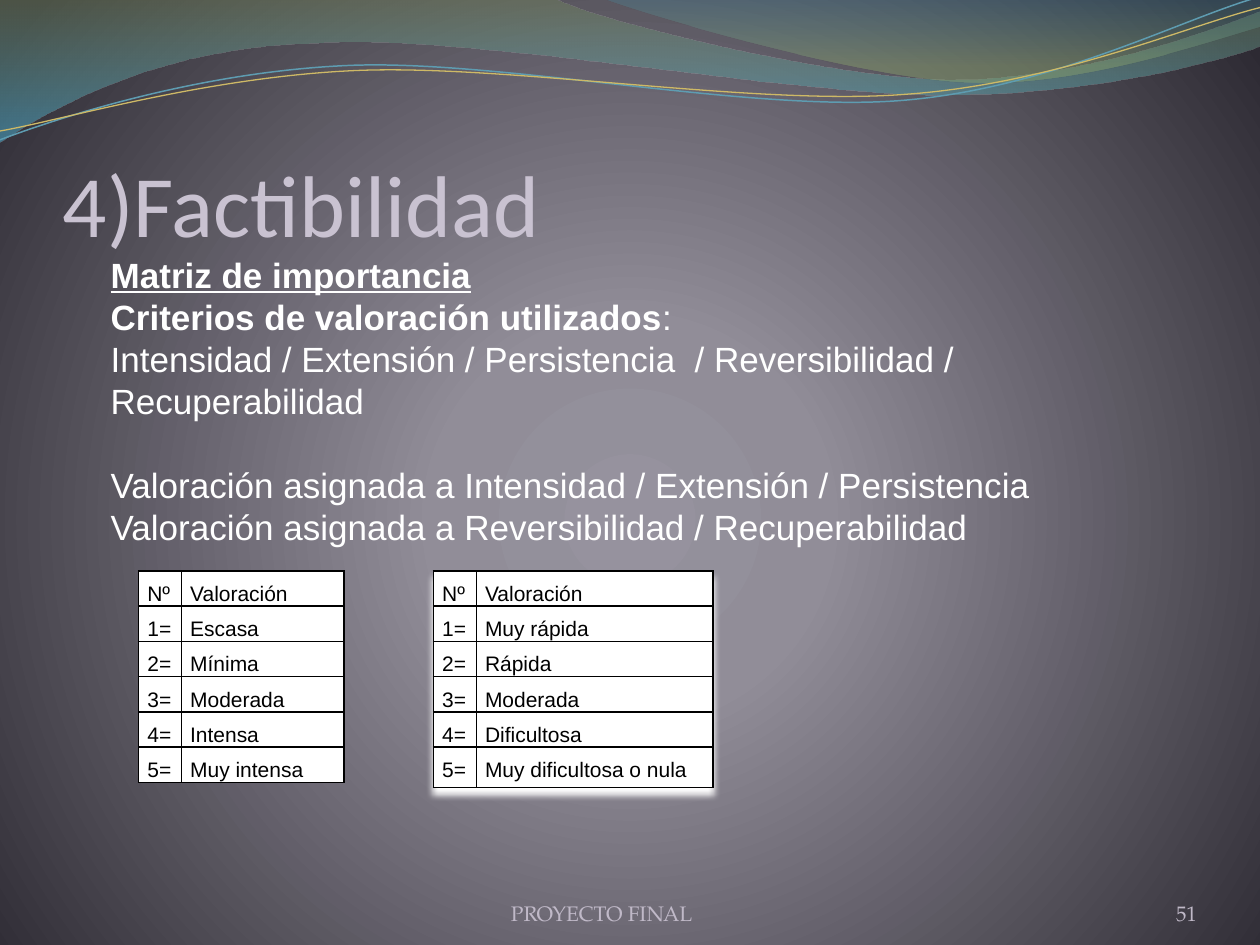
from pptx import Presentation
from pptx.dml.color import RGBColor
from pptx.enum.text import MSO_ANCHOR, PP_ALIGN
from pptx.oxml import parse_xml
from pptx.oxml.ns import nsdecls, qn
from pptx.util import Inches, Pt

WHITE = RGBColor(0xFF, 0xFF, 0xFF)
BLACK = RGBColor(0, 0, 0)
LILAC = RGBColor(0xC9, 0xC2, 0xD1)
MUTED = RGBColor(0xC0, 0xB9, 0xC8)
GLOW = RGBColor(0x96, 0x92, 0x9E)
GREY = RGBColor(0x91, 0x8D, 0x98)
NIGHT = RGBColor(0x2D, 0x2A, 0x33)
OLIVE = RGBColor(0x74, 0x85, 0x5E)
AQUA = RGBColor(0x4A, 0xAC, 0xCE)
TEAL = RGBColor(0x45, 0x88, 0x9F)
MOSS = RGBColor(0x8A, 0xA3, 0x6D)
BLUE = RGBColor(0x5E, 0x9C, 0xB1)
GOLD = RGBColor(0xCE, 0xB9, 0x66)
BOTTOM = MSO_ANCHOR.BOTTOM
LEFT, CENTER, RIGHT = PP_ALIGN.LEFT, PP_ALIGN.CENTER, PP_ALIGN.RIGHT
DOWNWARD = '<a:lin ang="5400000" scaled="0"/>'
RADIAL = ('<a:path path="circle"><a:fillToRect l="10000" t="110000" '
          'r="10000" b="100000"/></a:path>')

WIDE_WAVE = [(0, 0), (4.4, -0.01), (4.76, 0.17, 6.64, 0.63, 7.58, 0.63),
             (8.53, 0.63, 9.58, 0.26, 10, 0.09), (10.01, 0.36),
             (9.83, 0.44, 8.7, 0.76, 7.46, 0.75),
             (6.22, 0.75, 3.82, 0.28, 2.57, 0.34),
             (1.29, 0.36, 0.46, 0.83, -0.01, 1.13)]
RIGHT_WAVE = [(4.79, -0.01), (5.09, 0.11, 6.82, 0.62, 7.69, 0.65),
              (8.56, 0.69, 9.61, 0.32, 10, 0.21), (10, 0)]
BLUE_STRAND = [(0, 1.11), (0.48, 0.93, 1.58, 0.57, 2.77, 0.52),
               (3.95, 0.47, 5.93, 0.89, 7.13, 0.8),
               (8.33, 0.71, 9.38, 0.15, 9.98, -0.02)]
GOLD_STRAND = [(0, 1.04), (0.47, 0.96, 1.64, 0.61, 2.83, 0.56),
               (4.03, 0.51, 5.97, 0.84, 7.17, 0.75),
               (8.36, 0.67, 9.41, 0.21, 10, 0.06)]
EFFECT_GRADES = ["Valoración", "Escasa", "Mínima", "Moderada", "Intensa", "Muy intensa"]
RECOVERY_GRADES = ["Valoración", "Muy rápida", "Rápida", "Moderada", "Dificultosa",
                   "Muy dificultosa o nula"]
CRITERIA = [
    "Matriz de importancia",
    "Criterios de valoración utilizados",
    "Intensidad / Extensión / Persistencia  / Reversibilidad / Recuperabilidad",
    "Valoración asignada a Intensidad / Extensión / Persistencia",
    "Valoración asignada a Reversibilidad / Recuperabilidad",
]


def gradient_xml(stops, direction):
    """Return a gradient fill from (position, colour, opacity) stops in percent."""
    marks = "".join(
        f'<a:gs pos="{position * 1000}"><a:srgbClr val="{color}">'
        f'<a:alpha val="{opacity * 1000}"/></a:srgbClr></a:gs>'
        for position, color, opacity in stops)
    return f'<a:gradFill {nsdecls("a")}><a:gsLst>{marks}</a:gsLst>{direction}</a:gradFill>'


def paint_background(page):
    """Give the page its radial gradient."""
    gradient = gradient_xml([(0, GLOW, 100), (25, GREY, 100), (100, NIGHT, 100)], RADIAL)
    page.element.cSld.insert(0, parse_xml(
        f'<p:bg {nsdecls("p", "a")}><p:bgPr>{gradient}<a:effectLst/></p:bgPr></p:bg>'))


def bend(shape, outline):
    """Turn the straight segments that have control points into cubic curves."""
    straights = list(shape.element.spPr.iter(qn("a:lnTo")))
    for straight, segment in zip(straights, outline[1:]):
        if len(segment) == 6:
            points = "".join(
                f'<a:pt x="{Inches(x) - shape.left}" y="{Inches(y) - shape.top}"/>'
                for x, y in zip(segment[::2], segment[1::2]))
            straight.getparent().replace(straight, parse_xml(
                f'<a:cubicBezTo {nsdecls("a")}>{points}</a:cubicBezTo>'))


def add_outline(page, outline, close):
    """Build a curved freeform without fill or shadow along an outline in inches."""
    points = [(Inches(segment[-2]), Inches(segment[-1])) for segment in outline]
    builder = page.shapes.build_freeform(*points[0])
    builder.add_line_segments(points[1:], close=close)
    shape = builder.convert_to_shape()
    bend(shape, outline)
    shape.shadow.inherit = False
    shape.fill.background()
    return shape


def add_wave(page, outline, stops):
    """Add a translucent wave with a vertical gradient."""
    wave = add_outline(page, outline, True)
    wave.line.fill.background()
    properties = wave.element.spPr
    properties.replace(properties.find(qn("a:noFill")),
                       parse_xml(gradient_xml(stops, DOWNWARD)))


def add_strand(page, outline, color, width):
    """Add a thin curved line."""
    strand = add_outline(page, outline, False)
    strand.line.color.rgb = color
    strand.line.width = Pt(width)


def style_span(span, font, size, color):
    """Set the font of a run."""
    span.font.name = font
    span.font.size = Pt(size)
    span.font.color.rgb = color


def add_label(page, frame, text, font, size, color, align, inset=0):
    """Add a one-line text box that is anchored at the bottom."""
    box = page.shapes.add_textbox(*map(Inches, frame))
    body = box.text_frame
    body.word_wrap = True
    body.vertical_anchor = BOTTOM
    body.margin_left = body.margin_right = body.margin_bottom = 0
    body.margin_top = Inches(inset)
    body.text = text
    para = body.paragraphs[0]
    para.alignment = align
    style_span(para.runs[0], font, size, color)


def add_criteria(page):
    """Add the block of text about the criteria."""
    box = page.shapes.add_textbox(Inches(0.78), Inches(1.96), Inches(8.75), Inches(3.67))
    body = box.text_frame
    body.word_wrap = True
    body.text = "\n".join(CRITERIA)
    heading, subheading, _, assigned, _ = body.paragraphs
    heading.runs[0].font.bold = heading.runs[0].font.underline = True
    subheading.runs[0].font.bold = True
    subheading.add_run().text = ":"
    assigned.space_before = Pt(24)
    for para in body.paragraphs:
        para.line_spacing = Pt(24)
        for span in para.runs:
            style_span(span, "Arial", 20, WHITE)


def fill_cell(cell, text):
    """Write a white cell with black borders."""
    cell.margin_left = cell.margin_right = Inches(0.07)
    cell.margin_top = cell.margin_bottom = 0
    cell.text = text
    para = cell.text_frame.paragraphs[0]
    para.line_spacing = Pt(20)
    style_span(para.runs[0], "Arial", 12, BLACK)
    properties = cell._tc.get_or_add_tcPr()
    for side in ("lnL", "lnR", "lnT", "lnB"):
        properties.append(parse_xml(
            f'<a:{side} {nsdecls("a")} w="12700"><a:solidFill>'
            f'<a:srgbClr val="{BLACK}"/></a:solidFill></a:{side}>'))
    cell.fill.solid()
    cell.fill.fore_color.rgb = WHITE


def add_scale(page, left, grades, grade_width, last_height=0.28):
    """Add a numbered table of grades and return it."""
    heights = [0.28] * (len(grades) - 1) + [last_height]
    widths = [0.34, grade_width]
    table = page.shapes.add_table(
        len(grades), 2, Inches(left), Inches(4.53),
        Inches(sum(widths)), Inches(sum(heights))).table
    table.first_row = table.horz_banding = False
    for column, width in zip(table.columns, widths):
        column.width = Inches(width)
    for index, (grade, height) in enumerate(zip(grades, heights)):
        table.rows[index].height = Inches(height)
        fill_cell(table.cell(index, 0), f"{index}=" if index else "Nº")
        fill_cell(table.cell(index, 1), grade)
    return table


def add_glow(table):
    """Cast a soft white shadow below a table."""
    table._tbl.tblPr.insert(0, parse_xml(
        f'<a:effectLst {nsdecls("a")}><a:outerShdw blurRad="50800" dist="50800" '
        f'dir="5400000"><a:srgbClr val="{WHITE}"/></a:outerShdw></a:effectLst>'))


def main():
    """Build the slide and save it."""
    deck = Presentation()
    deck.slide_width, deck.slide_height = Inches(10), Inches(7.5)
    page = deck.slides.add_slide(deck.slide_layouts[6])
    paint_background(page)
    add_wave(page, WIDE_WAVE, [(0, OLIVE, 45), (100, AQUA, 55)])
    add_wave(page, RIGHT_WAVE, [(0, TEAL, 30), (80, MOSS, 45)])
    add_strand(page, BLUE_STRAND, BLUE, 0.85)
    add_strand(page, GOLD_STRAND, GOLD, 0.75)
    add_label(page, (0.5, 0.77, 9, 1.25), "4)Factibilidad", "Calibri", 50, LILAC, LEFT, 0.05)
    for frame, text, align in (((2.92, 6.95, 3.67, 0.4), " PROYECTO FINAL", CENTER),
                               ((8.67, 6.95, 0.83, 0.4), "51", RIGHT)):
        add_label(page, frame, text, "TeX Gyre Pagella", 12, MUTED, align)
    add_scale(page, 1.1, EFFECT_GRADES, 1.29)
    add_glow(add_scale(page, 3.44, RECOVERY_GRADES, 1.88, 0.32))
    add_criteria(page)
    deck.save("out.pptx")


if __name__ == "__main__":
    main()
